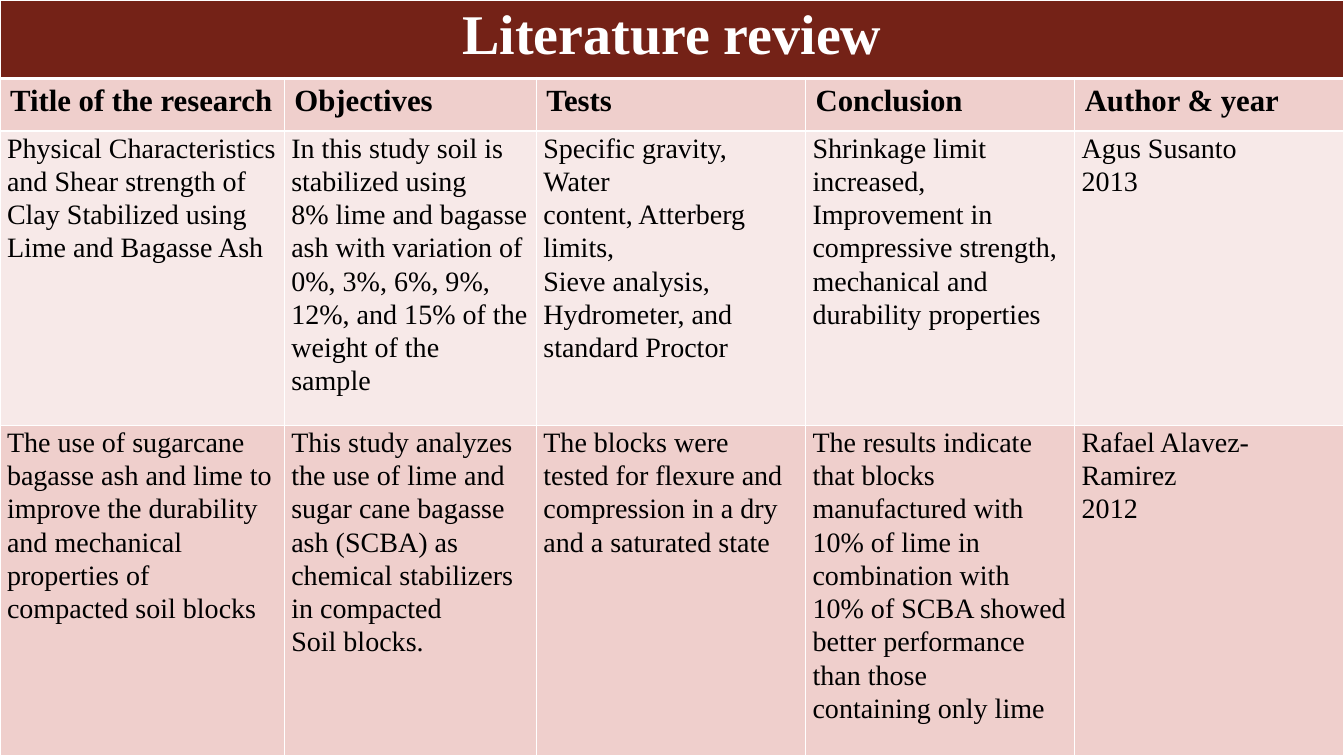
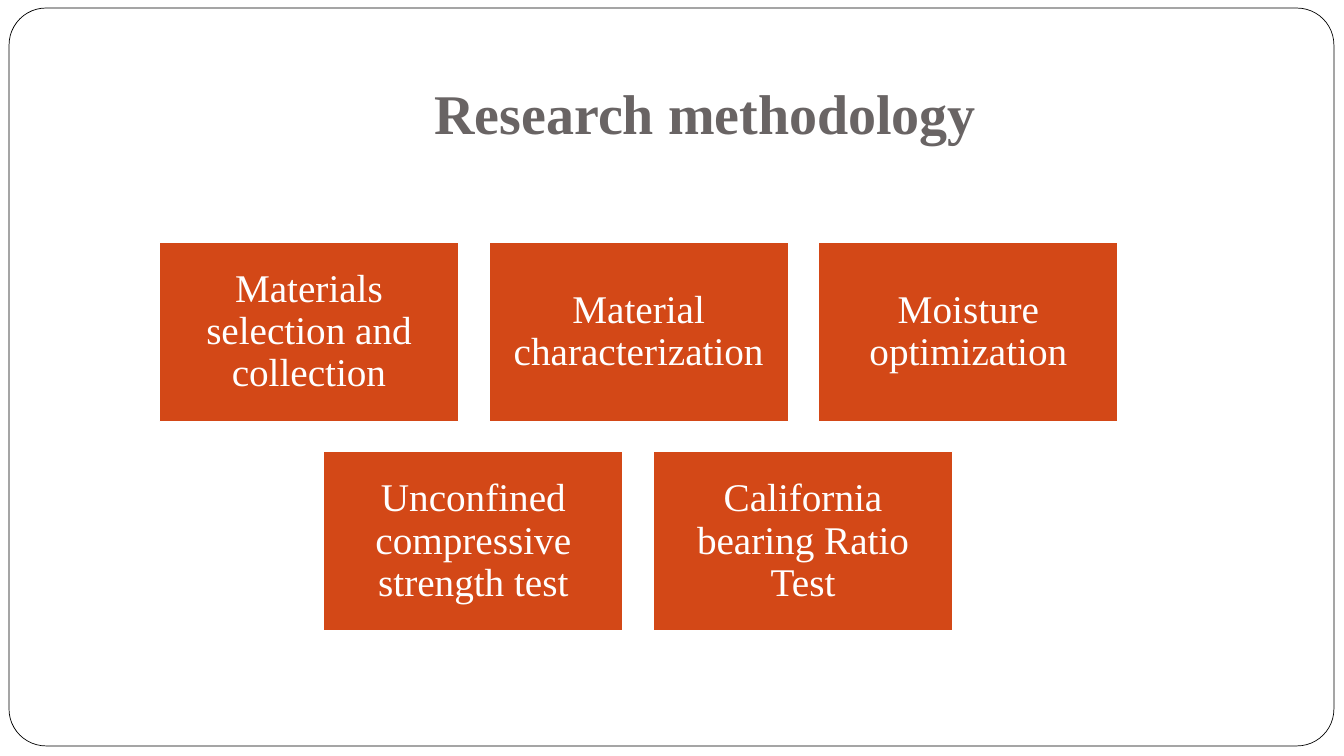
import lxml.etree
import pptx
import pptx.dml.color
import pptx.enum.shapes
import pptx.enum.text
import pptx.oxml.ns
import pptx.util

RGBColor = pptx.dml.color.RGBColor
ALIGN = pptx.enum.text.PP_ALIGN
ANCHOR = pptx.enum.text.MSO_ANCHOR
SHAPE = pptx.enum.shapes.MSO_SHAPE

EMU_PER_PX = 9144  # 100 px to the inch
SLIDE_WIDTH, SLIDE_HEIGHT = 1333, 750

FONT = "Times New Roman"
TITLE_SIZE = 40
WHITE = RGBColor(0xFF, 0xFF, 0xFF)
BLACK = RGBColor(0x00, 0x00, 0x00)
MAROON = RGBColor(0x74, 0x22, 0x17)
ROSE = RGBColor(0xEF, 0xCF, 0xCC)
PALE_ROSE = RGBColor(0xF7, 0xE9, 0xE8)
ORANGE = RGBColor(0xD3, 0x48, 0x17)
TITLE_GREY = RGBColor(0x69, 0x64, 0x64)

COLUMN_WIDTHS = [282, 250, 267, 267, 267]
ROW_HEIGHTS = [78, 52, 292, 328]
HEADINGS = ["Title of the research", "Objectives", "Tests", "Conclusion", "Author & year"]
STUDIES = [
    [
        "Physical Characteristics and Shear strength of Clay Stabilized using Lime and Bagasse Ash",
        "In this study soil is stabilized using\n"
        "8% lime and bagasse ash with variation of 0%, 3%, 6%, 9%, 12%, and 15% of the weight of the\n"
        "sample",
        "Specific gravity, Water\ncontent, Atterberg limits,\n"
        "Sieve analysis, Hydrometer, and standard Proctor",
        "Shrinkage limit increased, Improvement in compressive strength, "
        "mechanical and durability properties",
        "Agus Susanto\n2013",
    ],
    [
        "The use of sugarcane bagasse ash and lime to improve the durability\n"
        "and mechanical properties of compacted soil blocks",
        "This study analyzes the use of lime and sugar cane bagasse ash (SCBA) "
        "as chemical stabilizers in compacted\nSoil blocks.",
        "The blocks were tested for flexure and compression in a dry and a saturated state",
        "The results indicate that blocks\n"
        "manufactured with 10% of lime in combination with 10% of SCBA showed "
        "better performance than those\ncontaining only lime",
        "Rafael Alavez-Ramirez\n2012",
    ],
]
METHOD_ROWS = [
    ["Materials selection and collection", "Material characterization", "Moisture optimization"],
    ["Unconfined compressive strength test", "California bearing Ratio Test"],
]


def px(length):
    return pptx.util.Emu(length * EMU_PER_PX)


def box_emu(box):
    return [px(length) for length in box]


def write_text(text_frame, text, size, color, bold=False, align=ALIGN.LEFT, line_spacing=None):
    text_frame.text = text
    text_frame.word_wrap = True
    for paragraph in text_frame.paragraphs:
        paragraph.alignment = align
        if line_spacing:
            paragraph.line_spacing = line_spacing
        for run in paragraph.runs:
            run.font.name = FONT
            run.font.size = pptx.util.Pt(size)
            run.font.bold = bold
            run.font.color.rgb = color


def set_margins(target, left, top, right, bottom):
    """Set the insets of a cell or a text frame, in px."""
    target.margin_left, target.margin_top = px(left), px(top)
    target.margin_right, target.margin_bottom = px(right), px(bottom)


def add_filled_shape(slide, kind, box, fill, line_color, line_width):
    shape = slide.shapes.add_shape(kind, *box_emu(box))
    shape.shadow.inherit = False
    shape.fill.solid()
    shape.fill.fore_color.rgb = fill
    shape.line.color.rgb = line_color
    shape.line.width = pptx.util.Pt(line_width)
    return shape


def set_cell_borders(cell, top=1, bottom=1):
    """Draw white borders, with widths in points."""
    properties = cell._tc.get_or_add_tcPr()
    qn = pptx.oxml.ns.qn
    for tag, width in (("a:lnL", 1), ("a:lnR", 1), ("a:lnT", top), ("a:lnB", bottom)):
        line = lxml.etree.SubElement(properties, qn(tag), w=str(pptx.util.Pt(width)))
        fill = lxml.etree.SubElement(line, qn("a:solidFill"))
        lxml.etree.SubElement(fill, qn("a:srgbClr"), val=str(WHITE))


def fill_cell(cell, color):
    cell.fill.solid()
    cell.fill.fore_color.rgb = color


def add_review_table(slide, box):
    table = slide.shapes.add_table(len(ROW_HEIGHTS), len(COLUMN_WIDTHS), *box_emu(box)).table
    table.first_row = False
    table.horz_banding = False
    for column, width in zip(table.columns, COLUMN_WIDTHS):
        column.width = px(width)
    for row, height in zip(table.rows, ROW_HEIGHTS):
        row.height = px(height)

    title_cell = table.cell(0, 0)
    title_cell.merge(table.cell(0, len(COLUMN_WIDTHS) - 1))
    for cell in table.rows[0].cells:
        set_cell_borders(cell, bottom=3)
        fill_cell(cell, MAROON)
    write_text(title_cell.text_frame, "Literature review", TITLE_SIZE, WHITE, True, ALIGN.CENTER)

    for cell, heading in zip(table.rows[1].cells, HEADINGS):
        set_cell_borders(cell, top=3)
        fill_cell(cell, ROSE)
        write_text(cell.text_frame, heading, 22, BLACK, bold=True)

    for row_index, (study, color) in enumerate(zip(STUDIES, (PALE_ROSE, ROSE)), start=2):
        for cell, text in zip(table.rows[row_index].cells, study):
            set_cell_borders(cell)
            fill_cell(cell, color)
            set_margins(cell, 7, 0, 7, 0)
            write_text(cell.text_frame, text, 20, BLACK, line_spacing=1.07)


def add_frame(slide, box):
    frame = add_filled_shape(slide, SHAPE.ROUNDED_RECTANGLE, box, WHITE, BLACK, 0.5)
    frame.adjustments[0] = 0.05


def add_title(slide, box, text):
    text_frame = slide.shapes.add_textbox(*box_emu(box)).text_frame
    text_frame.vertical_anchor = ANCHOR.BOTTOM
    set_margins(text_frame, 10, 5, 10, 10)
    write_text(text_frame, text, TITLE_SIZE, TITLE_GREY, True, ALIGN.CENTER)


def add_method_grid(slide, box, gap=30):
    """Place the method steps in rows, each row centred in the box."""
    left, top, width, height = box
    most_steps = max(len(steps) for steps in METHOD_ROWS)
    step_width = (width - gap * (most_steps - 1)) // most_steps
    step_height = (height - gap * (len(METHOD_ROWS) - 1)) // len(METHOD_ROWS)
    for row_index, steps in enumerate(METHOD_ROWS):
        row_width = len(steps) * (step_width + gap) - gap
        row_left = left + (width - row_width) // 2
        step_top = top + row_index * (step_height + gap)
        for step_index, text in enumerate(steps):
            step_left = row_left + step_index * (step_width + gap)
            step_box = (step_left, step_top, step_width, step_height)
            shape = add_filled_shape(slide, SHAPE.RECTANGLE, step_box, ORANGE, WHITE, 1)
            shape.text_frame.vertical_anchor = ANCHOR.MIDDLE
            set_margins(shape.text_frame, 12, 12, 12, 12)
            write_text(shape.text_frame, text, 28, WHITE, align=ALIGN.CENTER, line_spacing=0.9)


def build_literature_slide(slide):
    add_review_table(slide, (0, 0, SLIDE_WIDTH, SLIDE_HEIGHT))


def build_methodology_slide(slide):
    add_frame(slide, (9, 8, 1314, 732))
    add_title(slide, (133, 30, 1133, 125), "Research methodology")
    add_method_grid(slide, (158, 240, 951, 386))


def main():
    presentation = pptx.Presentation()
    presentation.slide_width = px(SLIDE_WIDTH)
    presentation.slide_height = px(SLIDE_HEIGHT)
    blank_layout = presentation.slide_layouts[6]
    for build_slide in (build_literature_slide, build_methodology_slide):
        build_slide(presentation.slides.add_slide(blank_layout))
    presentation.save("out.pptx")


if __name__ == "__main__":
    main()
